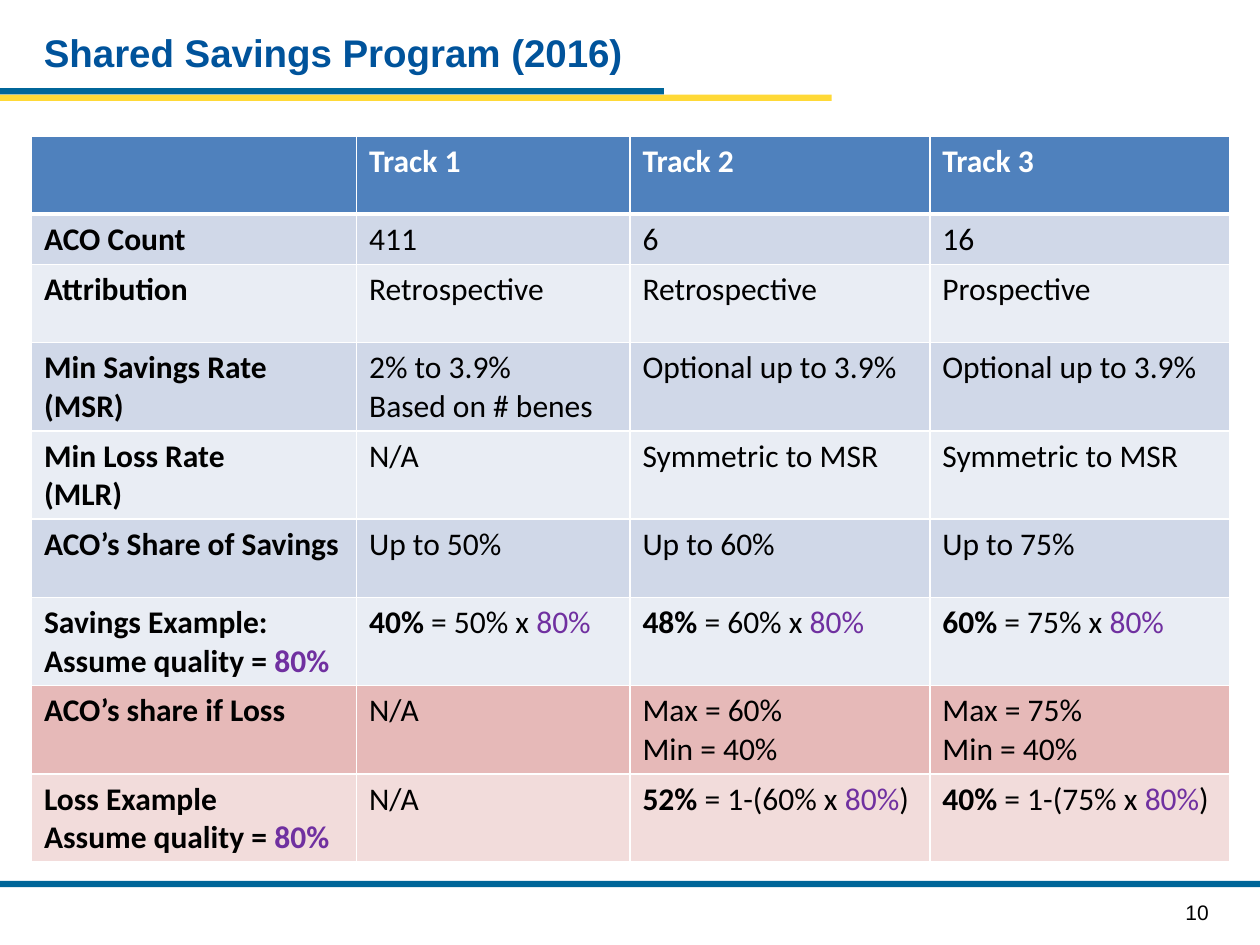
from dataclasses import dataclass

from lxml.etree import SubElement
from pptx import Presentation
from pptx.dml.color import RGBColor
from pptx.enum.shapes import MSO_SHAPE as Shape
from pptx.enum.text import MSO_ANCHOR as Anchor
from pptx.oxml.ns import qn
from pptx.util import Inches, Pt

WIDTH, HEIGHT = 10, 7.5
BLUE, YELLOW, PURPLE = "006699", "FFD937", "7030A0"
BLACK, WHITE = "000000", "FFFFFF"
HEADER, DARK, LIGHT, ROSE, PINK = "4F81BD", "D0D8E8", "E9EDF4", "E6B9B8", "F2DCDB"
QUALITY = "80%"


@dataclass(frozen=True)
class Bar:
    """A rule across the slide, placed by shares of its width and height."""
    top: float
    width: float
    color: str


@dataclass(frozen=True)
class Label:
    """A line of text in its own box, in inches."""
    text: str
    box: tuple[float, float, float, float]
    size: int
    color: str
    bold: bool = False
    wrap: bool = True


@dataclass(frozen=True)
class Row:
    """One table row with its height in inches and its fill."""
    height: float
    fill: str
    texts: tuple[str, str, str, str]


BARS = [Bar(0.1, 0.66, YELLOW), Bar(0.0933, 0.527, BLUE), Bar(0.932, 1, BLUE)]
LABELS = [
    Label("10", (9.31, 7.09, 0.49, 0.3), 12, BLACK, wrap=False),
    Label("Shared Savings Program (2016)", (0.25, 0.13, 9.5, 0.57), 22, "00539B", True),
]
COLUMNS = [2.58, 2.17, 2.38, 2.38]
ROWS = [
    Row(0.62, HEADER, ("", "Track 1", "Track 2", "Track 3")),
    Row(0.38, DARK, ("ACO Count", "411", "6", "16")),
    Row(0.62, LIGHT, ("Attribution", "Retrospective", "Retrospective", "Prospective")),
    Row(0.66, DARK, ("Min Savings Rate\n(MSR)", "2% to 3.9%\nBased on # benes",
                     "Optional up to 3.9%", "Optional up to 3.9%")),
    Row(0.66, LIGHT, ("Min Loss Rate\n(MLR)", "N/A", "Symmetric to MSR", "Symmetric to MSR")),
    Row(0.62, DARK, ("ACO’s Share of Savings", "Up to 50%", "Up to 60%", "Up to 75%")),
    Row(0.66, LIGHT, ("Savings Example:\nAssume quality = 80%", "40% = 50% x 80%",
                      "48% = 60% x 80%", "60% = 75% x 80%")),
    Row(0.66, ROSE, ("ACO’s share if Loss", "N/A", "Max = 60%\nMin = 40%", "Max = 75%\nMin = 40%")),
    Row(0.62, PINK, ("Loss Example\nAssume quality = 80%", "N/A",
                     "52% = 1-(60% x 80%)", "40% = 1-(75% x 80%)")),
]


def rgb(color: str) -> RGBColor:
    """Turn a hex string into a colour."""
    return RGBColor.from_string(color)


def add_run(p, text: str, font: str, size: int, color: str, bold: bool) -> None:
    """Append a formatted run, unless it is empty."""
    if text:
        r = p.add_run()
        r.text = text
        r.font.name, r.font.size, r.font.bold = font, Pt(size), bold
        r.font.color.rgb = rgb(color)


def add_bar(s, bar: Bar) -> None:
    """Draw a thin filled bar from the left edge."""
    sp = s.shapes.add_shape(Shape.RECTANGLE, 0, Inches(bar.top * HEIGHT),
                            Inches(bar.width * WIDTH), Inches(0.05))
    sp.shadow.inherit = False
    sp.fill.solid()
    sp.fill.fore_color.rgb = rgb(bar.color)
    sp.line.fill.background()


def add_label(s, label: Label) -> None:
    """Draw a text box holding one line."""
    tf = s.shapes.add_textbox(*map(Inches, label.box)).text_frame
    tf.word_wrap = label.wrap
    tf.vertical_anchor = Anchor.MIDDLE
    add_run(tf.paragraphs[0], label.text, "Arial", label.size, label.color, label.bold)


def set_borders(cell, top: float, bottom: float) -> None:
    """Give a cell white borders."""
    tc_pr = cell._tc.get_or_add_tcPr()
    for side, width in zip("LRTB", (1, 1, top, bottom)):
        ln = SubElement(tc_pr, qn(f"a:ln{side}"), w=str(Pt(width)))
        SubElement(SubElement(ln, qn("a:solidFill")), qn("a:srgbClr"), val=WHITE)


def write_line(p, text: str, color: str, bold: bool) -> None:
    """Write a table line, with the result bold and the quality score purple."""
    body, score, tail = text.partition(QUALITY)
    lead, equals, rest = body.partition(" = ") if score else ("", "", body)
    parts = [(lead, color, True), (equals + rest, color, bold),
             (score, PURPLE, bold), (tail, color, bold)]
    for part, tint, weight in parts:
        add_run(p, part, "Calibri", 18, tint, weight)


def fill_cell(cell, text: str, fill: str, row: int, bold: bool) -> None:
    """Style one cell and write its lines."""
    set_borders(cell, 3 if row == 1 else 1, 3 if row == 0 else 1)
    cell.fill.solid()
    cell.fill.fore_color.rgb = rgb(fill)
    tf = cell.text_frame
    for i, line in enumerate(text.split("\n")):
        p = tf.add_paragraph() if i else tf.paragraphs[0]
        write_line(p, line, BLACK if row else WHITE, bold)


def add_tracks(s) -> None:
    """Draw the table that compares the tracks."""
    table = s.shapes.add_table(len(ROWS), len(COLUMNS), Inches(0.25), Inches(1.08),
                               Inches(sum(COLUMNS)), Inches(sum(r.height for r in ROWS))).table
    for column, width in zip(table.columns, COLUMNS):
        column.width = Inches(width)
    for i, row in enumerate(ROWS):
        table.rows[i].height = Inches(row.height)
        for j, text in enumerate(row.texts):
            fill_cell(table.cell(i, j), text, row.fill, i, i == 0 or j == 0)


def main() -> None:
    """Build and save the slide."""
    prs = Presentation()
    prs.slide_width, prs.slide_height = Inches(WIDTH), Inches(HEIGHT)
    s = prs.slides.add_slide(prs.slide_layouts[6])
    for bar in BARS:
        add_bar(s, bar)
    for label in LABELS:
        add_label(s, label)
    add_tracks(s)
    prs.save("out.pptx")


if __name__ == "__main__":
    main()
